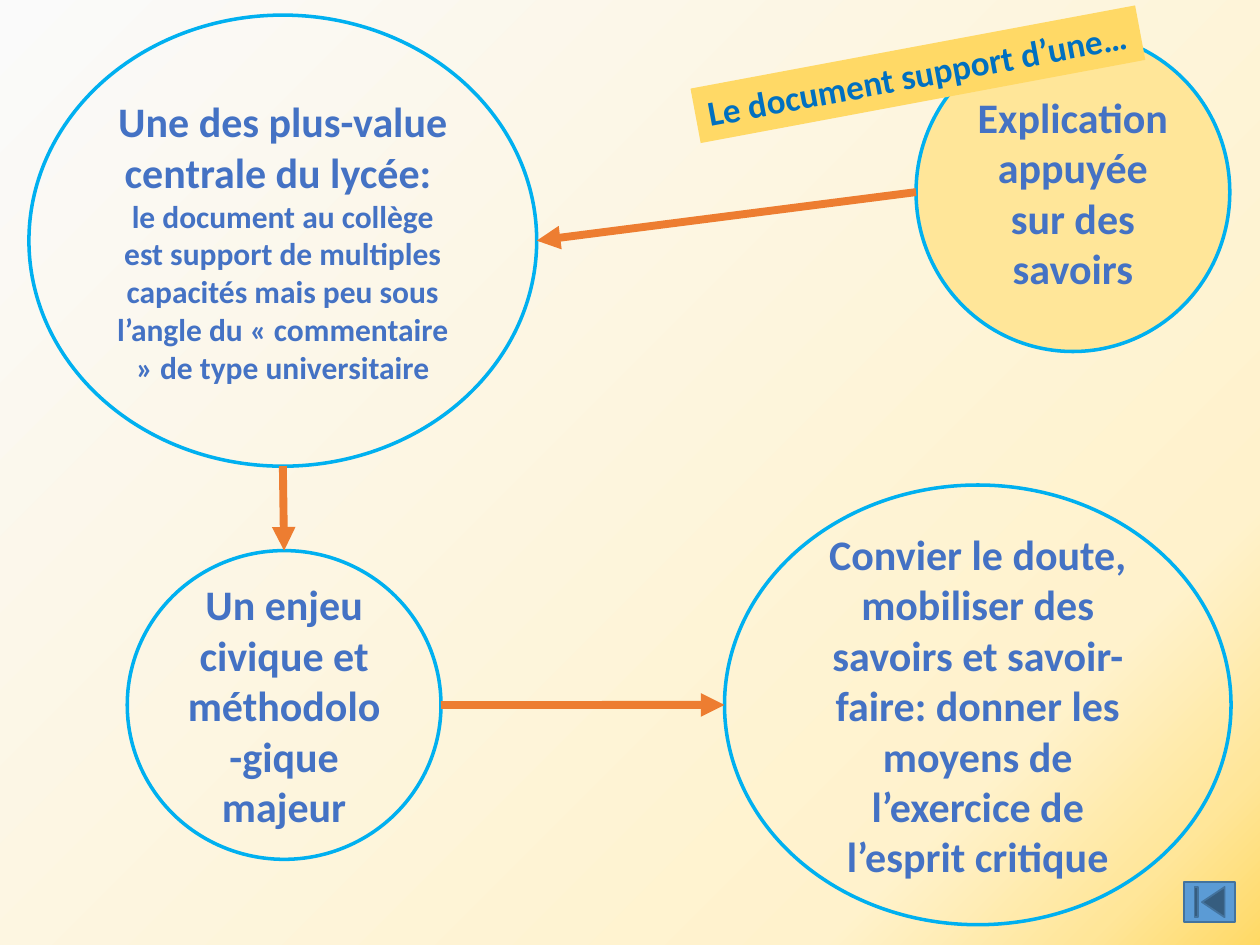
"""Build a slide of four linked ideas about explaining documents in class."""
from lxml import etree
from pptx import Presentation, util as u
from pptx.dml.color import RGBColor
from pptx.enum import shapes, text
from pptx.oxml.ns import qn

WIDTH, HEIGHT = u.Inches(10), u.Inches(7.5)
FONT, INK, RING, ARROW = "Calibri", "4472C4", "00B0F0", "ED7D31"
BACKGROUND = [(0, "FAFAFA"), (80, "FFF2CC"), (92, "FFE699"), (100, "FFD966")]

# Boxes are left, top, width and height in percent of the slide.
BUTTON = (94, 93.33, 4, 4.27)
LABEL = ("Le document support d’une…", (54.9, 4.93, 35.9, 5.87), 349.4)
IDEAS = {
    "explanation": ((72.7, 3.47, 24.9, 33.73), "FFE699",
                    [("Explication appuyée sur des savoirs", 24)]),
    "added value": ((2.3, 1.6, 40.3, 47.73), None,
                    [("Une des plus-value centrale du lycée: ", 24),
                     ("le document au collège est support de multiples capacités mais peu "
                      "sous l’angle du « commentaire » de type universitaire", 18)]),
    "civic issue": ((10.1, 58.27, 24.9, 32.67), None,
                    [("Un enjeu civique et méthodolo-gique majeur", 24)]),
    "doubt": ((57.5, 51.33, 40.2, 46.53), None,
              [("Convier le doute,", 24),
               ("mobiliser des savoirs et savoir-faire: donner les moyens de "
                "l’exercice de l’esprit critique", 24)]),
}
SIDES = {"left": (0, 0.5), "right": (1, 0.5), "top": (0.5, 0), "bottom": (0.5, 1)}
LINKS = [("explanation", "left", "added value", "right"),
         ("added value", "bottom", "civic issue", "top"),
         ("civic issue", "right", "doubt", "left")]


def color(value):
    return RGBColor.from_string(value)


def place(box):
    return [round(share / 100 * size) for share, size in zip(box, (WIDTH, HEIGHT) * 2)]


def paint_background(slide):
    fill = slide.background.fill
    fill.gradient()
    fill.gradient_angle = 315
    stops = next(slide.element.iter(qn("a:gsLst")))
    for stop in list(stops):
        stops.remove(stop)
    for position, value in BACKGROUND:
        stop = etree.SubElement(stops, qn("a:gs"), pos=str(position * 1000))
        etree.SubElement(stop, qn("a:srgbClr"), val=value)


def add_shape(slide, kind, box, fill=None, line=None, width=1):
    shape = slide.shapes.add_shape(kind, *place(box))
    shape.shadow.inherit = False
    if fill:
        shape.fill.solid()
        shape.fill.fore_color.rgb = color(fill)
    else:
        shape.fill.background()
    if line:
        shape.line.color.rgb = color(line)
        shape.line.width = u.Pt(width)
    else:
        shape.line.fill.background()
    return shape


def write(shape, paragraphs, ink, align, anchor):
    frame = shape.text_frame
    frame.word_wrap = True
    frame.vertical_anchor = anchor
    for index, (words, size) in enumerate(paragraphs):
        paragraph = frame.add_paragraph() if index else frame.paragraphs[0]
        paragraph.alignment = align
        run = paragraph.add_run()
        run.text = words
        run.font.name, run.font.size, run.font.bold = FONT, u.Pt(size), True
        run.font.color.rgb = color(ink)


def side_point(idea, side):
    left, top, width, height = place(IDEAS[idea][0])
    across, down = SIDES[side]
    return round(left + across * width), round(top + down * height)


def add_arrow(slide, start, end):
    connector = slide.shapes.add_connector(shapes.MSO_CONNECTOR.STRAIGHT, *start, *end)
    connector.line.color.rgb = color(ARROW)
    connector.line.width = u.Pt(4.5)
    etree.SubElement(connector.line._get_or_add_ln(), qn("a:tailEnd"), type="triangle")
    etree.SubElement(connector.element.spPr, qn("a:effectLst"))


def main():
    presentation = Presentation()
    presentation.slide_width, presentation.slide_height = WIDTH, HEIGHT
    slide = presentation.slides.add_slide(presentation.slide_layouts[6])
    paint_background(slide)
    kinds = shapes.MSO_SHAPE
    add_shape(slide, kinds.ACTION_BUTTON_BEGINNING, BUTTON, "5B9BD5", "43739E")
    for box, fill, paragraphs in IDEAS.values():
        ellipse = add_shape(slide, kinds.OVAL, box, fill, RING, 2)
        write(ellipse, paragraphs, INK, text.PP_ALIGN.CENTER, text.MSO_ANCHOR.MIDDLE)
    for source, exit_side, target, entry_side in LINKS:
        add_arrow(slide, side_point(source, exit_side), side_point(target, entry_side))
    words, box, rotation = LABEL
    label = add_shape(slide, kinds.RECTANGLE, box, "FFD966")
    label.rotation = rotation
    write(label, [(words, 20)], "0070C0", text.PP_ALIGN.LEFT, text.MSO_ANCHOR.TOP)
    presentation.save("out.pptx")


if __name__ == "__main__":
    main()
